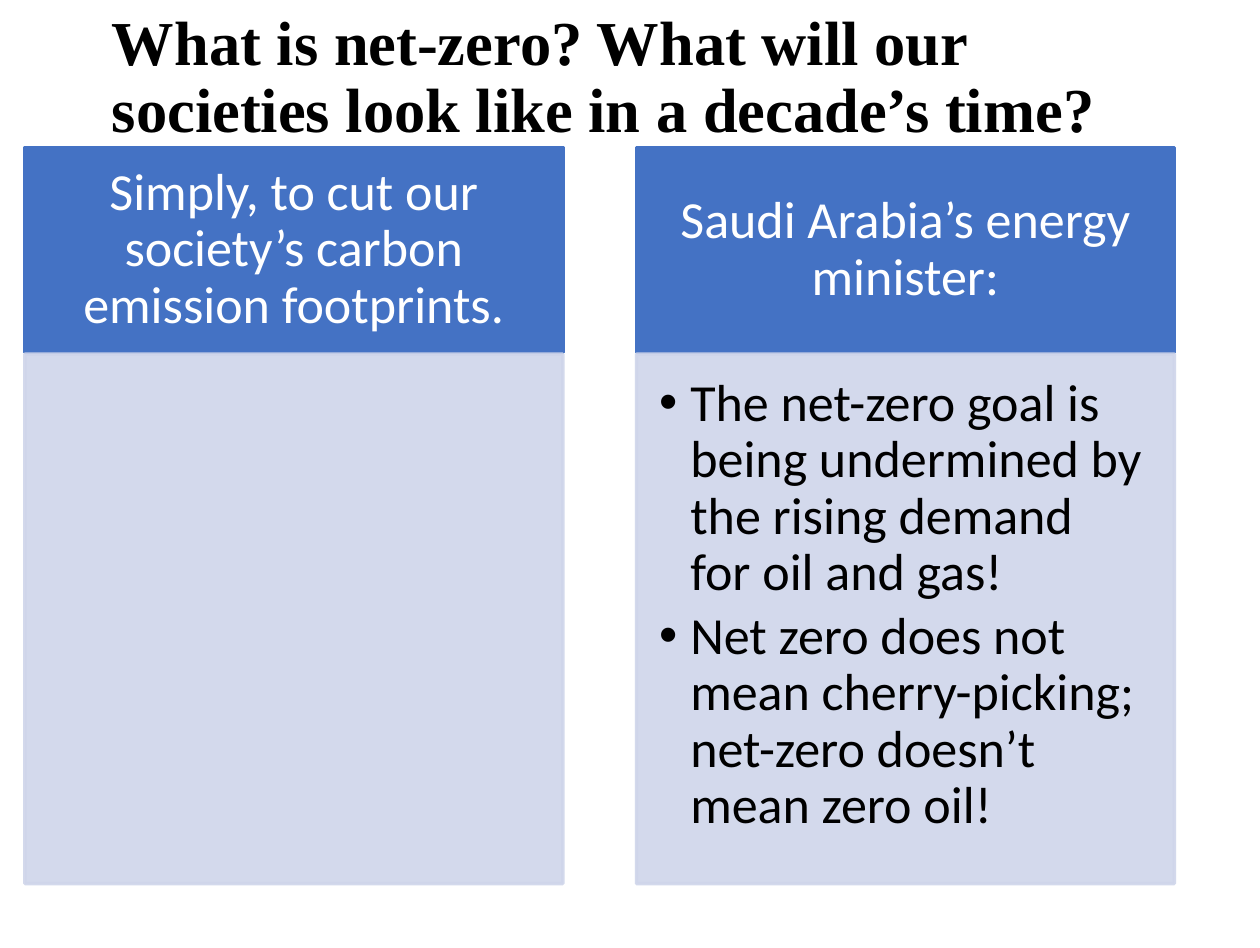
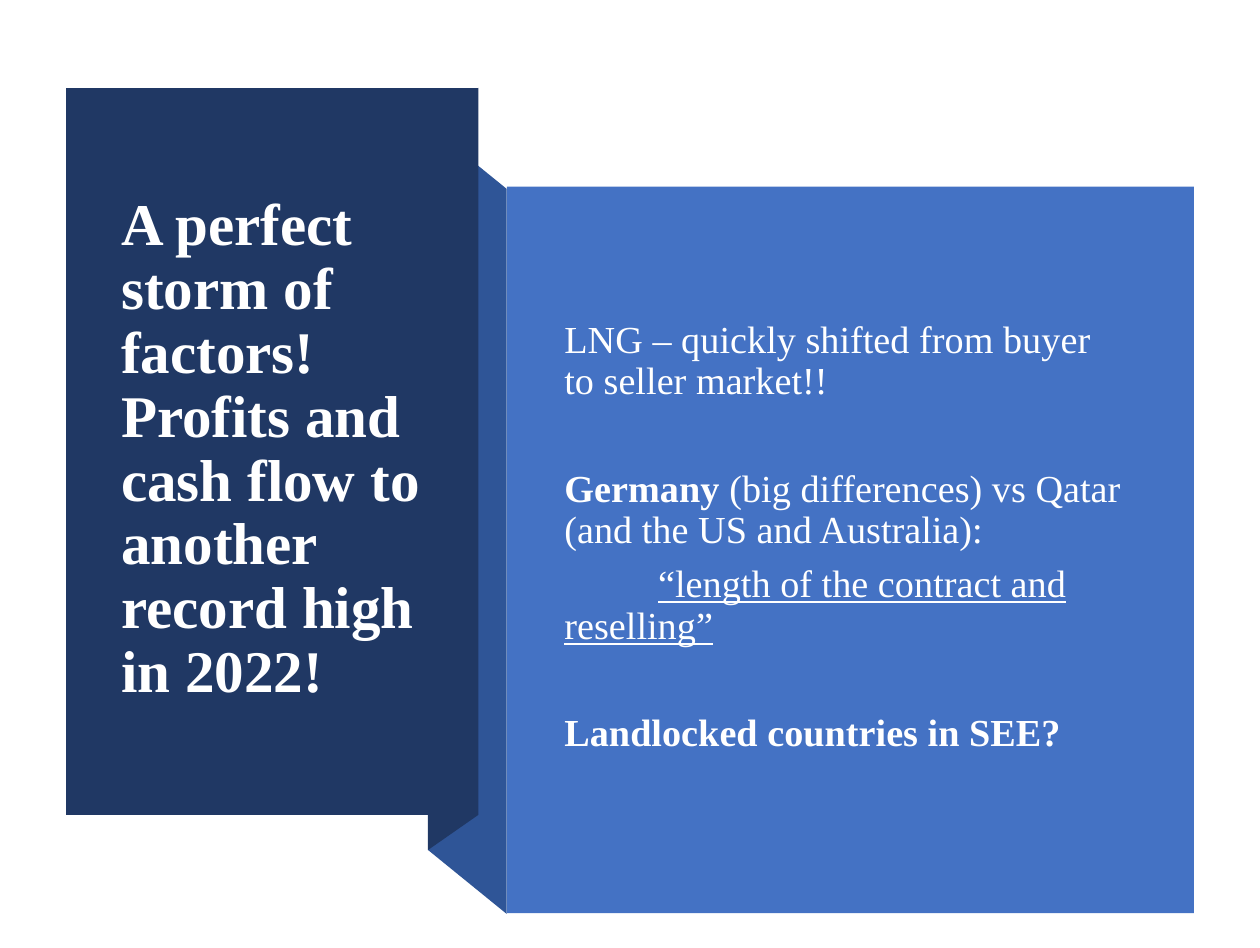
from dataclasses import dataclass

from lxml.etree import SubElement
from pptx import Presentation
from pptx.dml.color import RGBColor
from pptx.enum.shapes import MSO_SHAPE
from pptx.enum.text import MSO_ANCHOR, PP_ALIGN
from pptx.oxml.ns import qn
from pptx.util import Pt


@dataclass(frozen=True)
class Theme:
    blue: str = "4472C4"
    mid: str = "2F5597"
    navy: str = "203864"
    pale: str = "CFD5EA"
    white: str = "FFFFFF"
    black: str = "000000"
    serif: str = "Times New Roman"
    sans: str = "Calibri"
    head: int = 18
    side: int = 17
    text: int = 15
    note: int = 11


THEME = Theme()
INSET = (7.2, 3.6, 7.2, 3.6)


class Deck:
    def __init__(self, width, height):
        self.prs = Presentation()
        self.prs.slide_width = Pt(width)
        self.prs.slide_height = Pt(height)
        self.slide = None

    def page(self):
        self.slide = self.prs.slides.add_slide(self.prs.slide_layouts[6])

    def paint(self, shape, color, alpha=None, line=False):
        shape.shadow.inherit = False
        fills = [shape.fill]
        if line:
            shape.line.width = Pt(1)
            fills.append(shape.line.fill)
        else:
            shape.line.fill.background()
        for fill in fills:
            fill.solid()
            fill.fore_color.rgb = RGBColor.from_string(color)
        if alpha:
            for node in list(shape._element.spPr.iter(qn("a:srgbClr"))):
                SubElement(node, qn("a:alpha")).set("val", str(alpha * 1000))
        return shape

    def rect(self, box, color, alpha=None, line=False):
        shape = self.slide.shapes.add_shape(
            MSO_SHAPE.RECTANGLE, *[Pt(v) for v in box])
        return self.paint(shape, color, alpha, line)

    def poly(self, points, color):
        first, *rest = [(Pt(x), Pt(y)) for x, y in points]
        outline = self.slide.shapes.build_freeform(*first)
        outline.add_line_segments(rest, close=True)
        return self.paint(outline.convert_to_shape(), color)

    def box(self, box):
        return self.slide.shapes.add_textbox(*[Pt(v) for v in box])

    def label(self, shape, paras, font, size, color, inset=INSET,
              anchor=MSO_ANCHOR.MIDDLE, align=PP_ALIGN.LEFT, before=0):
        """Fill a shape; each paragraph is a list of (text, style) runs."""
        frame = shape.text_frame
        frame.word_wrap = True
        frame.vertical_anchor = anchor
        (frame.margin_left, frame.margin_top,
         frame.margin_right, frame.margin_bottom) = [Pt(v) for v in inset]
        for i, runs in enumerate(paras):
            para = frame.add_paragraph() if i else frame.paragraphs[0]
            para.alignment = align
            para.line_spacing = 0.9
            para.space_before = Pt(before)
            for text, style in runs:
                run = para.add_run()
                run.text = text
                run.font.name = font
                run.font.size = Pt(size)
                run.font.color.rgb = RGBColor.from_string(color)
                run.font.bold = style == "bold"
                run.font.underline = style == "under"
        return frame.paragraphs

    def title(self, box, text, size, color):
        self.label(self.box(box), [[(text, "bold")]], THEME.serif, size, color)

    def indent(self, para, left, first):
        props = para._p.get_or_add_pPr()
        props.set("marL", str(Pt(left)))
        props.set("indent", str(Pt(first)))
        return props

    def bullet(self, para):
        props = self.indent(para, 9, -9)
        SubElement(props, qn("a:buFont")).set("typeface", "Arial")
        SubElement(props, qn("a:buChar")).set("char", "•")

    def panel(self, left, head, points):
        """Draw a heading block above a pale block of bullets."""
        width = 155
        top = self.rect((left, 42.5, width, 59), THEME.blue, line=True)
        self.label(top, [[(head, "")]], THEME.sans, THEME.text, THEME.white,
                   inset=(8.5, 5, 8.5, 5), align=PP_ALIGN.CENTER)
        body = self.rect((left, 102, width, 152.5), THEME.pale, 90, True)
        if points:
            paras = self.label(
                body, [[(point, "")] for point in points], THEME.sans,
                THEME.text, THEME.black, inset=(6.5, 6.5, 8.5, 9.5),
                anchor=MSO_ANCHOR.TOP)
            for para in paras:
                para.space_after = Pt(2.25)
                self.bullet(para)


def goals(deck):
    deck.page()
    deck.title((25.2, 10.8, 312.5, 23.8),
               "What is net-zero? What will our societies look like "
               "in a decade’s time?", THEME.head, THEME.black)
    panels = [
        ("Simply, to cut our society’s carbon emission footprints.", []),
        ("Saudi Arabia’s energy minister:", [
            "The net-zero goal is being undermined by the rising demand "
            "for oil and gas!",
            "Net zero does not mean cherry-picking; net-zero doesn’t mean "
            "zero oil!"]),
    ]
    for i, (head, points) in enumerate(panels):
        deck.panel(7.2 + 176.2 * i, head, points)


def storm(deck):
    deck.page()
    left, fold, edge, right = 19, 123.3, 137.8, 146
    top, base = 25.3, 234.7
    deck.poly([(right, 263.2), (fold, 244.8), (fold, 36), (right, 54.4)],
              THEME.mid)
    deck.poly([(edge, base), (fold, 244.8), (fold, 35.4), (edge, top)],
              THEME.navy)
    deck.poly([(left, top), (edge, top), (edge, base), (left, base)],
              THEME.navy)
    deck.title((27.8, 38.9, 101, 181.4),
               "A perfect storm of factors! Profits and cash flow to "
               "another record high in 2022!", THEME.side, THEME.white)
    deck.rect((right, 53.8, 198, 209.2), THEME.blue)
    paras = deck.label(deck.box((155.5, 68.4, 177.2, 172.8)), [
        [("LNG – quickly shifted from buyer to seller market!!", "")],
        [("Germany", "bold"),
         (" (big differences) vs Qatar (and the US and Australia):", "")],
        [("“length of the contract and reselling”", "under")],
        [("Landlocked countries in SEE?", "bold")],
    ], THEME.serif, THEME.note, THEME.white, before=3.8)
    deck.indent(paras[2], 0, 27)
    for i in (1, 3):
        paras[i].space_before = Pt(19)


def main():
    deck = Deck(363, 273)
    goals(deck)
    storm(deck)
    deck.prs.save("out.pptx")


if __name__ == "__main__":
    main()
